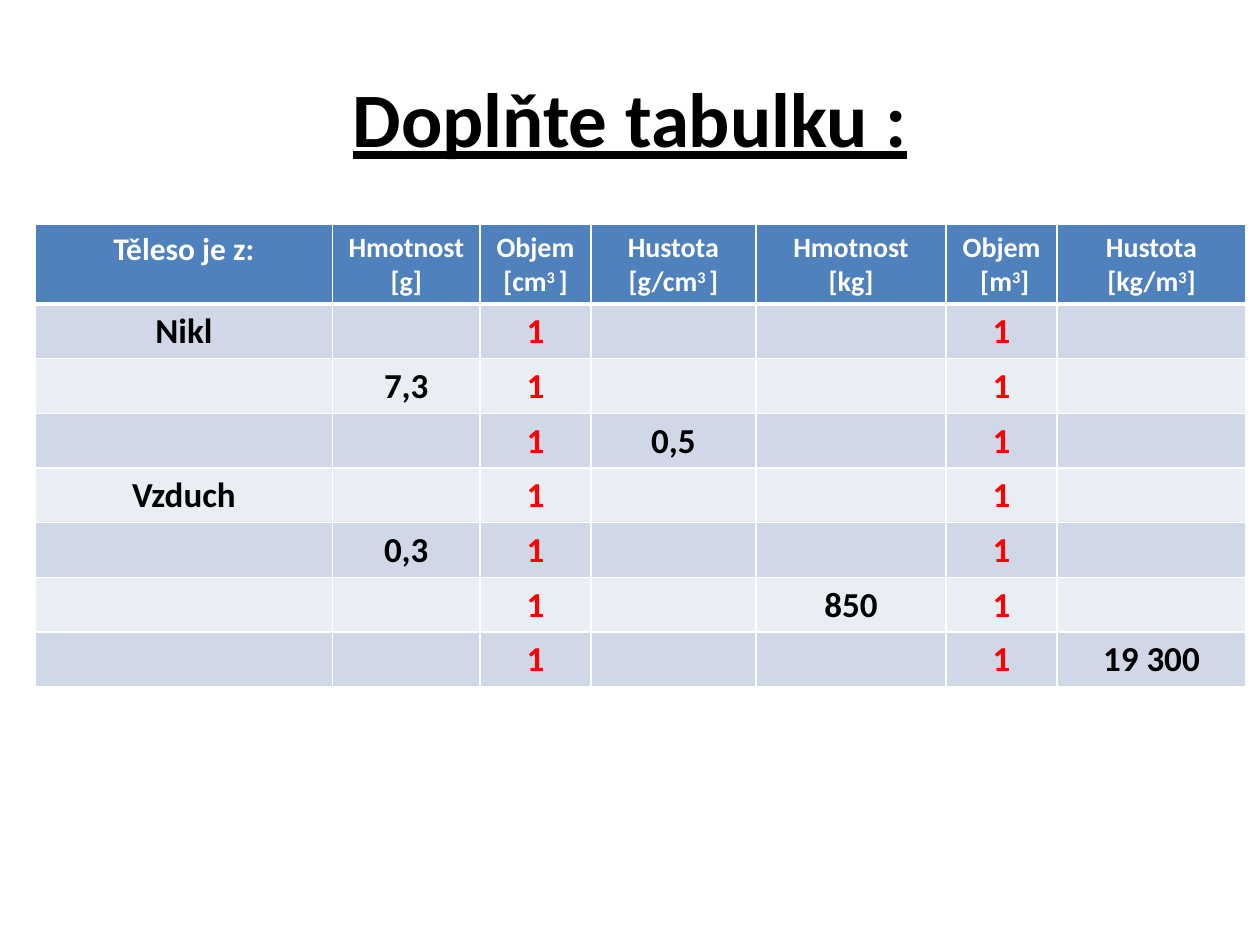
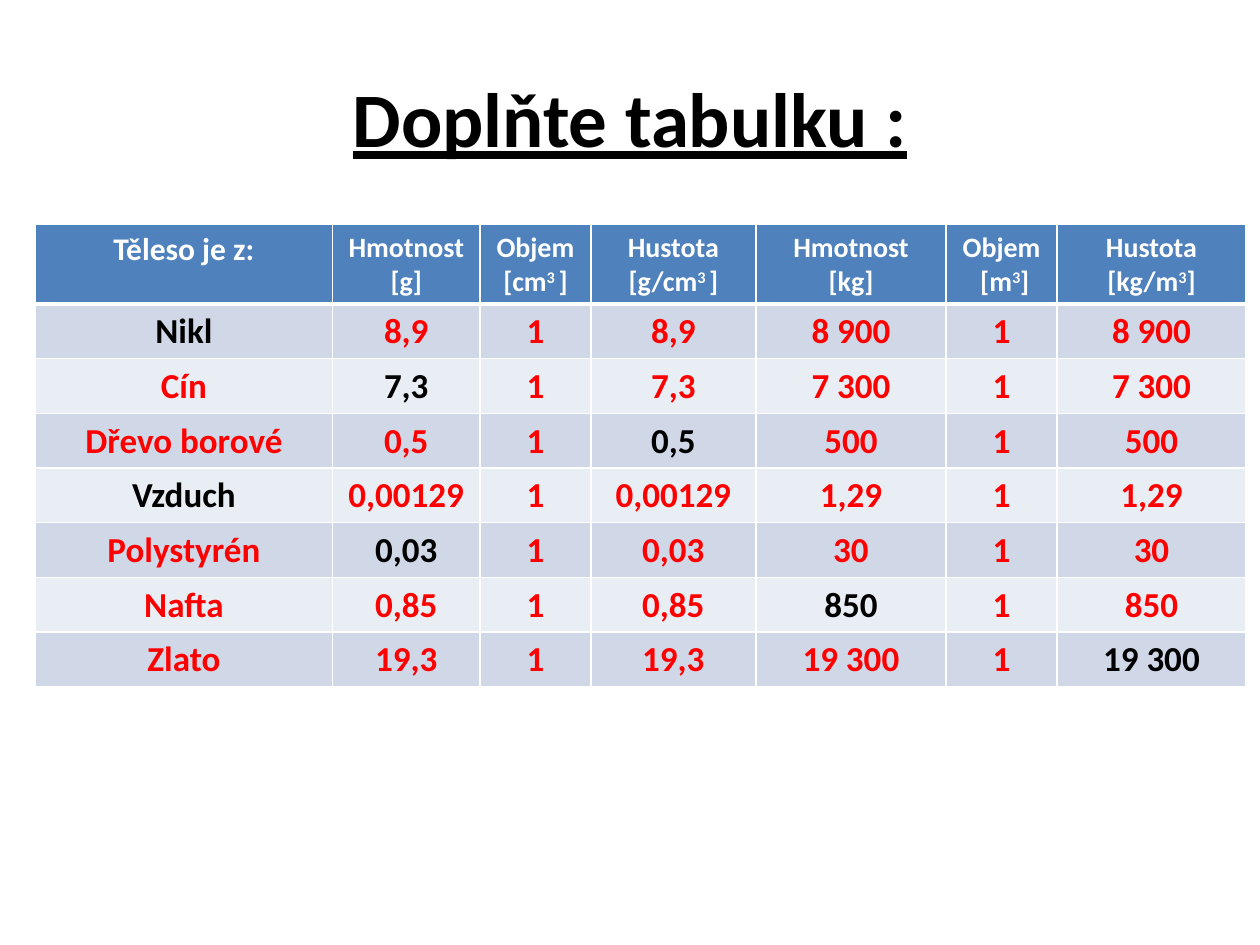
from lxml import etree
from pptx import Presentation
from pptx.dml.color import RGBColor
from pptx.enum.text import MSO_ANCHOR, PP_ALIGN
from pptx.oxml.ns import qn
from pptx.util import Inches, Pt

CENTER = PP_ALIGN.CENTER
MIDDLE = MSO_ANCHOR.MIDDLE

# Shared style
FONT = "Calibri"
BLACK = RGBColor(0x00, 0x00, 0x00)
WHITE = RGBColor(0xFF, 0xFF, 0xFF)
RED = RGBColor(0xFF, 0x00, 0x00)
HEADER_FILL = RGBColor(0x4F, 0x81, 0xBD)
BAND_FILLS = (RGBColor(0xE9, 0xED, 0xF4), RGBColor(0xD0, 0xD8, 0xE8))

TITLE = "Doplňte tabulku :"
COLUMN_WIDTHS = (2.36, 1.17, 0.88, 1.31, 1.51, 0.88, 1.5)
ROW_HEIGHT = 0.41

# Header cells: paragraphs of (text, is superscript) runs
HEADERS = [
    [[("Těleso je z:", False)]],
    [[("Hmotnost [g]", False)]],
    [[("Objem [cm", False), ("3 ", True), ("]", False)]],
    [[("Hustota [g/cm", False), ("3 ", True), ("]", False)]],
    [[("Hmotnost [kg]", False)]],
    [[("Objem", False)], [(" [m", False), ("3", True), ("]", False)]],
    [[("Hustota", False)], [("[kg/m", False), ("3", True), ("]", False)]],
]

# Material, value in g and g/cm3, value in kg and kg/m3, given column
MATERIALS = [
    ("Nikl", "8,9", "8 900", 0),
    ("Cín", "7,3", "7 300", 1),
    ("Dřevo borové", "0,5", "500", 3),
    ("Vzduch", "0,00129", "1,29", 0),
    ("Polystyrén", "0,03", "30", 1),
    ("Nafta", "0,85", "850", 4),
    ("Zlato", "19,3", "19 300", 6),
]
VOLUME_COLUMNS = (2, 5)
EXERCISE_VALUES = {"Polystyrén": "0,3"}


def add_run(paragraph, text, size, color, superscript=False, underline=None):
    run = paragraph.add_run()
    run.text = text
    font = run.font
    font.name, font.size, font.bold = FONT, Pt(size), True
    font.underline = underline
    font.color.rgb = color
    if superscript:
        run._r.get_or_add_rPr().set("baseline", "30000")


def add_title(slide):
    box = slide.shapes.add_textbox(Inches(0.5), Inches(0.3), Inches(9), Inches(1.25))
    frame = box.text_frame
    frame.word_wrap = True
    frame.vertical_anchor = MIDDLE
    paragraph = frame.paragraphs[0]
    paragraph.alignment = CENTER
    add_run(paragraph, TITLE, 44, BLACK, underline=True)


def set_borders(cell, top, bottom):
    properties = cell._tc.get_or_add_tcPr()
    for side, width in (("L", 1), ("R", 1), ("T", top), ("B", bottom)):
        line = etree.SubElement(properties, qn(f"a:ln{side}"), w=str(Pt(width)))
        fill = etree.SubElement(line, qn("a:solidFill"))
        etree.SubElement(fill, qn("a:srgbClr"), val=str(WHITE))


def style_cell(cell, row_index):
    set_borders(cell, 3 if row_index == 1 else 1, 3 if row_index == 0 else 1)
    cell.fill.solid()
    cell.fill.fore_color.rgb = BAND_FILLS[row_index % 2] if row_index else HEADER_FILL


def fill_header(cell, paragraphs, size):
    frame = cell.text_frame
    for index, runs in enumerate(paragraphs):
        paragraph = frame.add_paragraph() if index else frame.paragraphs[0]
        paragraph.alignment = CENTER
        for text, superscript in runs:
            add_run(paragraph, text, size, WHITE, superscript)


def fill_value(cell, text, color):
    paragraph = cell.text_frame.paragraphs[0]
    paragraph.alignment = CENTER
    add_run(paragraph, text, 20, color)


def add_density_table(slide, solved):
    table = slide.shapes.add_table(
        len(MATERIALS) + 1, len(HEADERS),
        Inches(0.28), Inches(1.78), Inches(9.61), Inches(3.67)).table
    for column, width in zip(table.columns, COLUMN_WIDTHS):
        column.width = Inches(width)
    for row_index, row in enumerate(table.rows):
        row.height = Inches(ROW_HEIGHT)
        for cell in row.cells:
            style_cell(cell, row_index)

    for column, paragraphs in enumerate(HEADERS):
        fill_header(table.cell(0, column), paragraphs, 16 if column else 18)

    # Given values are black; volumes and answers are red
    for row_index, (name, small, large, given) in enumerate(MATERIALS, start=1):
        values = [name, small, "1", small, large, "1", large]
        if not solved:
            values[given] = EXERCISE_VALUES.get(name, values[given])
        for column, value in enumerate(values):
            if solved or column == given or column in VOLUME_COLUMNS:
                color = BLACK if column == given else RED
                fill_value(table.cell(row_index, column), value, color)


def main():
    presentation = Presentation()
    presentation.slide_width, presentation.slide_height = Inches(10), Inches(7.5)
    blank = presentation.slide_layouts[6]
    # Exercise, then solution
    for solved in (False, True):
        slide = presentation.slides.add_slide(blank)
        add_title(slide)
        add_density_table(slide, solved)
    presentation.save("out.pptx")


if __name__ == "__main__":
    main()
